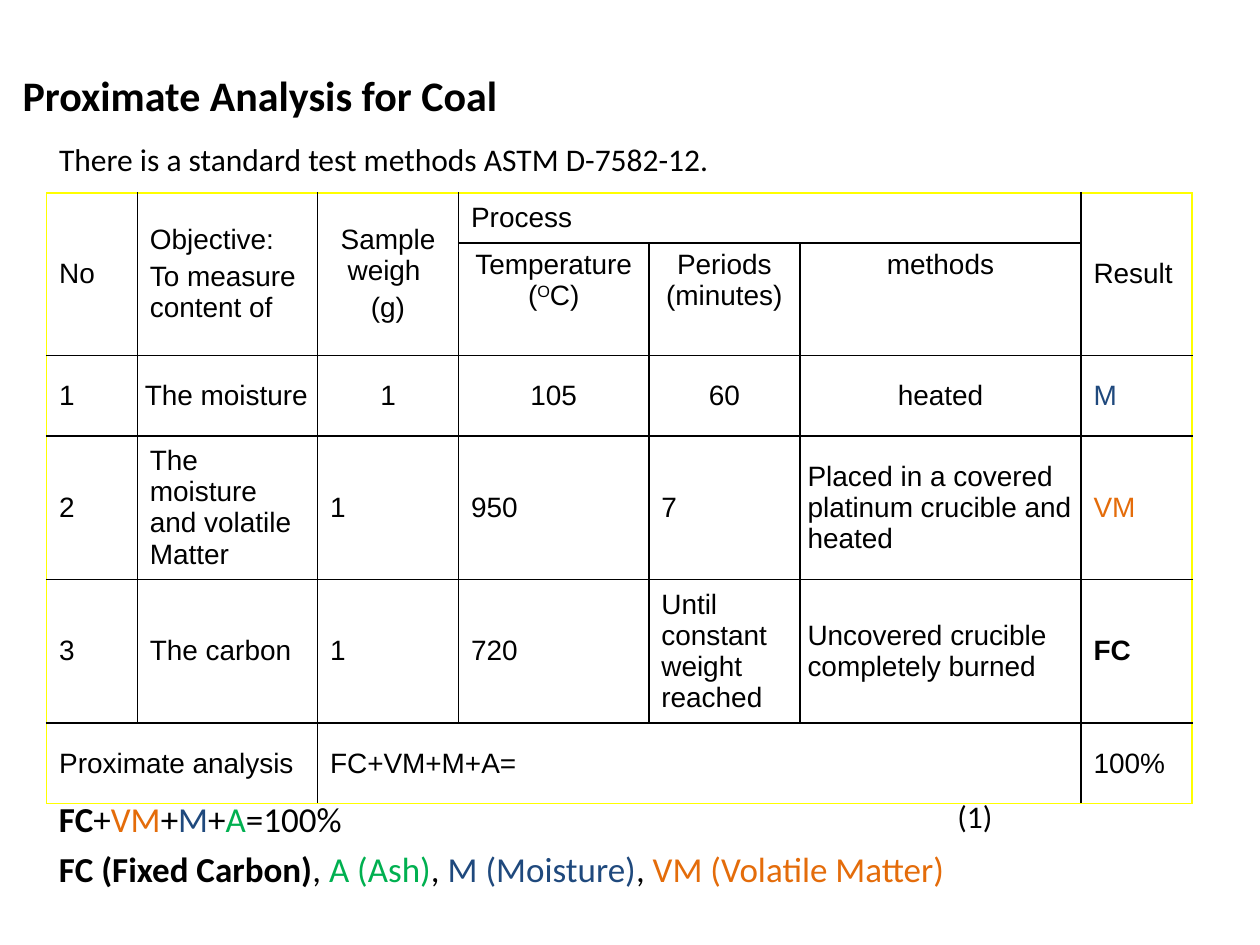
from lxml.etree import SubElement
from pptx import Presentation
from pptx.dml.color import RGBColor as RGB
from pptx.enum.text import MSO_ANCHOR as ANCHOR, MSO_AUTO_SIZE as AUTO_SIZE, PP_ALIGN as ALIGN
from pptx.oxml.ns import qn
from pptx.util import Inches, Pt

COLORS = {"black": "000000", "yellow": "FFFF00", "blue": "1F497D",
          "orange": "E46C0A", "green": "00B050"}


def write(frame, *paragraphs, size, font="Calibri", align=ALIGN.LEFT, gap=0):
    """Fill a frame; a paragraph is a string or a list of (text, colour, bold) runs."""
    frame.word_wrap = True
    for index, runs in enumerate(paragraphs):
        paragraph = frame.add_paragraph() if index else frame.paragraphs[0]
        paragraph.alignment = align
        if index:
            paragraph.space_before = Pt(gap)
        if isinstance(runs, str):
            runs = [(runs, "black", False)]
        for text, color, bold in runs:
            run = paragraph.add_run()
            run.text = text
            run.font.name = font
            run.font.size = Pt(size)
            run.font.bold = bold
            run.font.color.rgb = RGB.from_string(COLORS[color])


def set_borders(cell, **sides):
    """Draw a one-point line on each side (L, R, T, B) in the named colour."""
    properties = cell._tc.get_or_add_tcPr()
    for side, color in sides.items():
        line = SubElement(properties, qn(f"a:ln{side}"), w=str(Pt(1)))
        fill = SubElement(line, qn("a:solidFill"))
        SubElement(fill, qn("a:srgbClr"), val=COLORS[color])


presentation = Presentation()
presentation.slide_width, presentation.slide_height = Inches(10), Inches(7.5)
slide = presentation.slides.add_slide(presentation.slide_layouts[5])
LEFT = 0.37

# Title
title = slide.shapes.title
title.left, title.top = Inches(0.08), Inches(0.5)
title.width, title.height = Inches(5.25), Inches(0.51)
title.text_frame.auto_size = AUTO_SIZE.NONE
title.text_frame.vertical_anchor = ANCHOR.TOP
write(title.text_frame, [("Proximate Analysis for Coal", "black", True)], size=24)

# Table of test steps
column_widths = [0.72, 1.43, 1.12, 1.51, 1.2, 2.23, 0.88]
row_heights = [0.4, 0.89, 0.64, 1.14, 1.14, 0.64]
last_row, last_column = len(row_heights) - 1, len(column_widths) - 1
table_frame = slide.shapes.add_table(
    len(row_heights), len(column_widths), Inches(LEFT), Inches(1.53),
    Inches(sum(column_widths)), Inches(sum(row_heights)))
table = table_frame.table
table.first_row = table.horz_banding = False
for column, width in zip(table.columns, column_widths):
    column.width = Inches(width)
for row, height in zip(table.rows, row_heights):
    row.height = Inches(height)

merges = [((0, 0), (1, 0)), ((0, 1), (1, 1)), ((0, 2), (1, 2)), ((0, 3), (0, 5)),
          ((0, 6), (1, 6)), ((5, 0), (5, 1)), ((5, 2), (5, 5))]
for start, end in merges:
    table.cell(*start).merge(table.cell(*end))

rows = [
    ["No", ("Objective:", "To measure content of"), ("Sample weigh ", "(g)"),
     "Process", None, None, "Result"],
    [None, None, None,
     [("Temperature (", "black", False), ("O", "black", False), ("C)", "black", False)],
     "Periods (minutes)", "methods", None],
    ["1", "The moisture", "1", "105", "60", "heated", [("M", "blue", False)]],
    ["2", "The moisture and volatile Matter", "1", "950", "7",
     "Placed in a covered platinum crucible and heated", [("VM", "orange", False)]],
    ["3", "The carbon", "1", "720", "Until constant weight reached",
     "Uncovered crucible completely burned", [("FC", "black", True)]],
    ["Proximate analysis", None, "FC+VM+M+A=", None, None, None, "100%"],
]
centered = {(0, 2)} | {(row, column) for row in (1, 2) for column in (3, 4, 5)} | {(2, 2)}
narrow_margins = {(2, 1), (3, 5), (4, 5)}

for row, contents in enumerate(rows):
    for column, content in enumerate(contents):
        cell = table.cell(row, column)
        position = (row, column)
        cell.margin_left = cell.margin_right = Inches(0.06 if position in narrow_margins else 0.1)
        cell.margin_top = cell.margin_bottom = Inches(0.05)
        cell.vertical_anchor = ANCHOR.TOP if row == 1 else ANCHOR.MIDDLE
        set_borders(cell,
                    L="yellow" if column == 0 else "black",
                    R="yellow" if column == last_column else "black",
                    T="yellow" if row == 0 else "black",
                    B="yellow" if row == last_row else "black")
        cell.fill.background()
        if content is not None:
            paragraphs = content if isinstance(content, tuple) else (content,)
            write(cell.text_frame, *paragraphs, size=16, font="Arial", gap=3.2,
                  align=ALIGN.CENTER if position in centered else ALIGN.LEFT)

degree_run = table.cell(1, 3).text_frame.paragraphs[0].runs[1]
degree_run._r.get_or_add_rPr().set("baseline", "30000")

# Introduction, equation and legend
equation = [("FC", "black", True), ("+", "black", False), ("VM", "orange", False),
            ("+", "black", False), ("M", "blue", False), ("+", "black", False),
            ("A", "green", False), ("=100%", "black", False)]
legend = [("FC (Fixed Carbon)", "black", True), (", ", "black", False),
          ("A (Ash)", "green", False), (", ", "black", False),
          ("M (Moisture)", "blue", False), (", ", "black", False),
          ("VM (Volatile Matter)", "orange", False)]
text_boxes = [
    (LEFT, 1.06, 9.08, 0.4, 18, "There is a standard test methods ASTM D-7582-12."),
    (LEFT, 6.28, 5.67, 0.43, 20, equation),
    (LEFT, 6.68, 8.33, 0.44, 20, legend),
    (7.5, 6.28, 0.67, 0.4, 18, "(1)"),
]
for left, top, width, height, size, content in text_boxes:
    box = slide.shapes.add_textbox(Inches(left), Inches(top), Inches(width), Inches(height))
    write(box.text_frame, content, size=size)

presentation.save("out.pptx")
